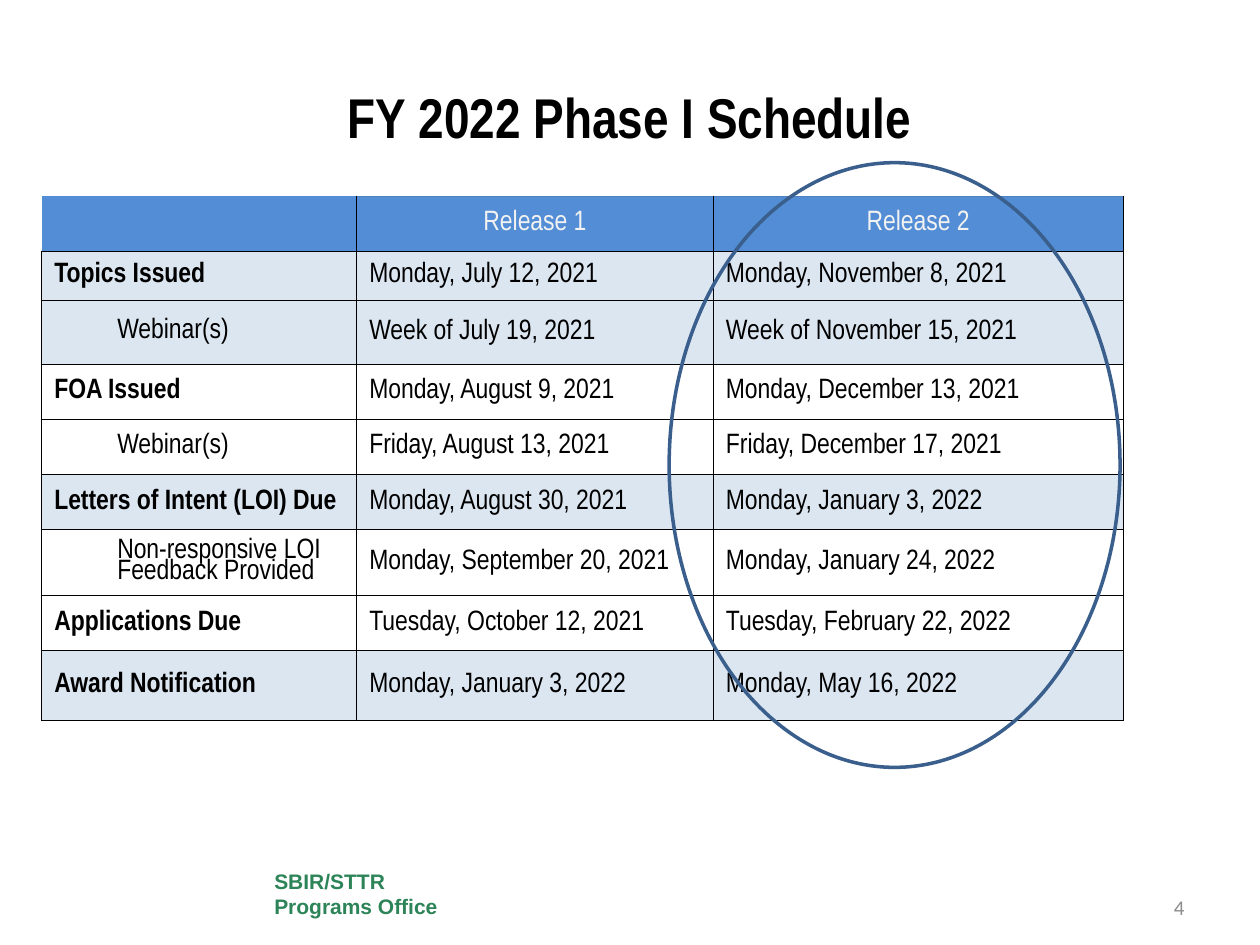
from dataclasses import dataclass

from lxml import etree
from pptx import Presentation
from pptx import util as u
from pptx.dml.color import RGBColor
from pptx.enum import shapes, text
from pptx.oxml.ns import qn


@dataclass(frozen=True)
class Theme:
    face: str = "Arial Narrow"
    label: str = "Arial"
    digit: str = "Calibri"
    black: str = "000000"
    white: str = "FFFFFF"
    head: str = "538DD5"
    pale: str = "F2F2F2"
    band: str = "DCE6F1"
    edge: str = "4F81BD"
    ring: str = "3A5F8C"
    green: str = "2C8458"
    grey: str = "8C8C8C"
    title: int = 32
    body: int = 16
    small: int = 12


THEME = Theme()
HEADS = ["", "Release 1", "Release 2"]
WIDTHS = [6.35, 7.19, 8.26]
HEAD_TALL = 1.11

# height, indented, banded, label, first release, second release
ROWS = [
    (0.99, False, True, "Topics Issued", "Monday, July 12, 2021", "Monday, November 8, 2021"),
    (1.29, True, True, "Webinar(s)", "Week of July 19, 2021", "Week of November 15, 2021"),
    (1.11, False, False, "FOA Issued", "Monday, August 9, 2021", "Monday, December 13, 2021"),
    (1.11, True, False, "Webinar(s)", "Friday, August 13, 2021", "Friday, December 17, 2021"),
    (1.11, False, True, "Letters of Intent (LOI) Due", "Monday, August 30, 2021", "Monday, January 3, 2022"),
    (1.31, True, False, "Non-responsive LOI Feedback Provided", "Monday, September 20, 2021",
     "Monday, January 24, 2022"),
    (1.11, False, False, "Applications Due", "Tuesday, October 12, 2021", "Tuesday, February 22, 2022"),
    (1.4, False, True, "Award Notification", "Monday, January 3, 2022", "Monday, May 16, 2022"),
]


def color(code):
    return RGBColor.from_string(code)


def add_run(para, words, face, size, code, bold=False):
    run = para.add_run()
    run.text = words
    run.font.name = face
    run.font.size = u.Pt(size)
    run.font.bold = bold
    run.font.color.rgb = color(code)


def add_text(slide, box, words, face, size, code, bold=False,
             align=text.PP_ALIGN.LEFT, anchor=text.MSO_ANCHOR.MIDDLE, fill=None):
    shape = slide.shapes.add_textbox(*map(u.Cm, box))
    if fill:
        shape.fill.solid()
        shape.fill.fore_color.rgb = color(fill)
    frame = shape.text_frame
    frame.word_wrap = True
    frame.vertical_anchor = anchor
    para = frame.paragraphs[0]
    para.alignment = align
    add_run(para, words, face, size, code, bold)


def set_edge(cell, side, code):
    props = cell._tc.get_or_add_tcPr()
    line = etree.SubElement(props, qn("a:ln" + side), w=str(u.Pt(0.5)))
    if code:
        fill = etree.SubElement(line, qn("a:solidFill"))
        etree.SubElement(fill, qn("a:srgbClr"), val=code)
    else:
        etree.SubElement(line, qn("a:noFill"))


def fill_cell(cell, words, code, fill, edges, bold=False, center=False, indent=False):
    for side, edge in zip("LRTB", edges):
        set_edge(cell, side, edge)
    if fill:
        cell.fill.solid()
        cell.fill.fore_color.rgb = color(fill)
    else:
        cell.fill.background()
    cell.vertical_anchor = text.MSO_ANCHOR.MIDDLE
    para = cell.text_frame.paragraphs[0]
    if center:
        para.alignment = text.PP_ALIGN.CENTER
    if indent:
        para.level = 1
        para.line_spacing = 0.8
        para._p.get_or_add_pPr().set("marL", str(u.Cm(1.27)))
    if words:
        add_run(para, words, THEME.face, THEME.body, code, bold)


def add_dates(slide):
    talls = [HEAD_TALL] + [row[0] for row in ROWS]
    box = (0.84, 3.95, sum(WIDTHS), sum(talls))
    table = slide.shapes.add_table(len(talls), len(WIDTHS), *map(u.Cm, box)).table
    table.first_row = False
    table.horz_banding = False
    for col, wide in zip(table.columns, WIDTHS):
        col.width = u.Cm(wide)
    for row, tall in zip(table.rows, talls):
        row.height = u.Cm(tall)

    black = THEME.black
    for col, words in enumerate(HEADS):
        left, top = (black, THEME.edge) if words else (None, None)
        fill_cell(table.cell(0, col), words, THEME.pale, THEME.head,
                  (left, black, top, black), center=True)
    for num, (_, indent, band, *cells) in enumerate(ROWS, 1):
        for col, words in enumerate(cells):
            first = col == 0
            fill_cell(table.cell(num, col), words, black, THEME.band if band else None,
                      [black] * 4, bold=first and not indent, indent=first and indent)


def add_ring(slide, box):
    ring = slide.shapes.add_shape(shapes.MSO_SHAPE.FLOWCHART_CONNECTOR, *map(u.Cm, box))
    ring.shadow.inherit = False
    ring.fill.background()
    ring.line.color.rgb = color(THEME.ring)
    ring.line.width = u.Pt(2)


def main():
    deck = Presentation()
    deck.slide_width, deck.slide_height = u.Cm(25.4), u.Cm(19.05)
    slide = deck.slides.add_slide(deck.slide_layouts[6])
    add_text(slide, (5.28, 17.4, 4.01, 1.22), "SBIR/STTR Programs Office",
             THEME.label, THEME.small, THEME.green, bold=True, fill=THEME.white)
    add_text(slide, (1.27, 0.76, 22.86, 3.18), "FY 2022 Phase I Schedule",
             THEME.face, THEME.title, THEME.black, bold=True, align=text.PP_ALIGN.CENTER)
    add_text(slide, (18.21, 17.65, 5.92, 1.02), "4", THEME.digit, THEME.small, THEME.grey,
             align=text.PP_ALIGN.RIGHT, anchor=text.MSO_ANCHOR.BOTTOM)
    add_dates(slide)
    add_ring(slide, (13.49, 3.28, 9.09, 12.19))
    deck.save("out.pptx")


if __name__ == "__main__":
    main()
